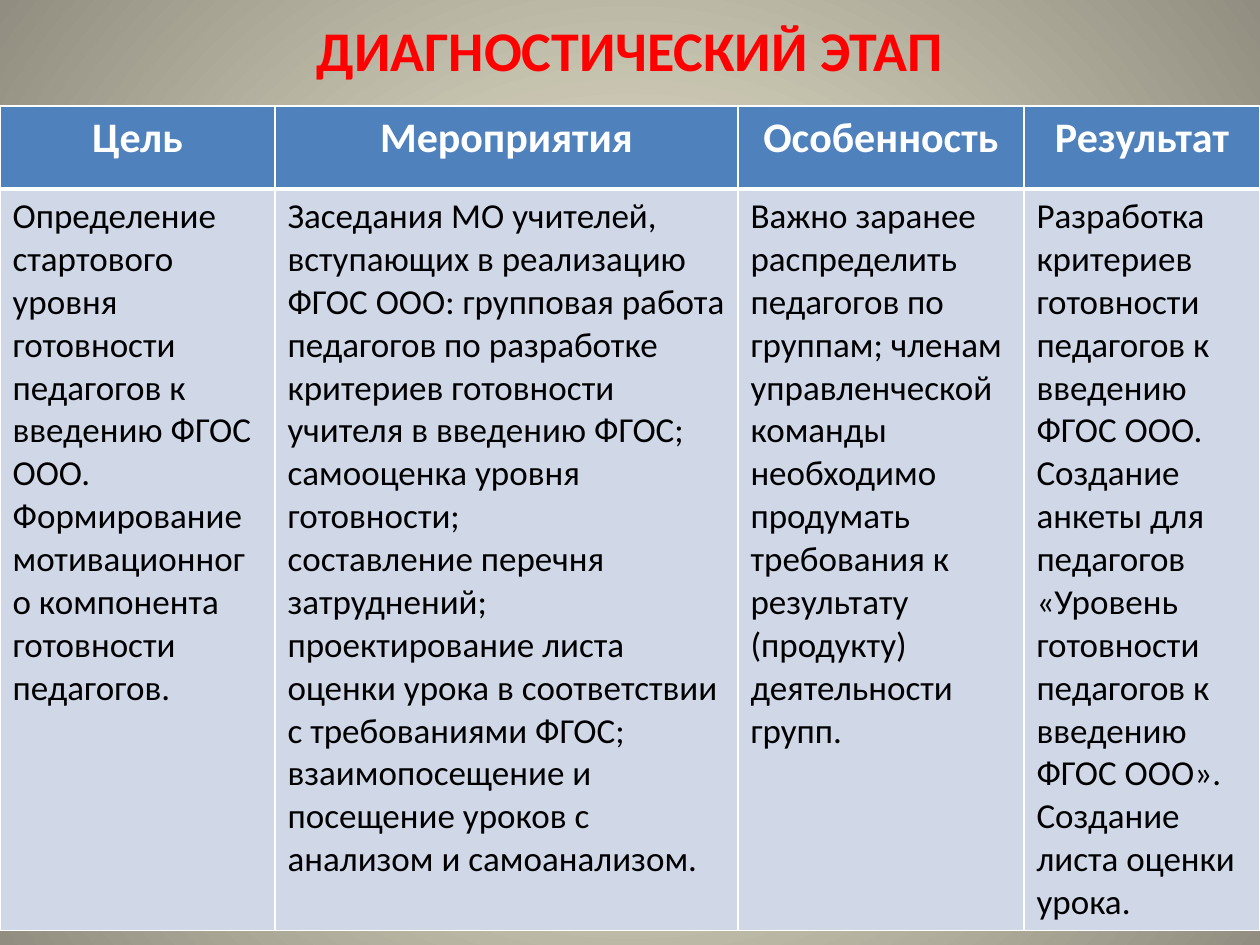
from lxml.etree import SubElement
from pptx import Presentation
from pptx.dml.color import RGBColor
from pptx.enum.text import MSO_ANCHOR, PP_ALIGN
from pptx.oxml.ns import qn
from pptx.util import Emu, Pt

PX = 914400 // 126
FONT = "Calibri"
COLORS = {
    "glow": "FCF7DD", "edge": "918E81", "title": "FF0000", "head": "4F81BD",
    "body": "D0D8E8", "white": "FFFFFF", "black": "000000",
}
WIDTHS = [275, 463, 286, 236]
HEIGHTS = [83, 723]
HEADS = ["Цель", "Мероприятия", "Особенность", "Результат"]
BODY = [
    ["Определение стартового уровня готовности педагогов к введению ФГОС ООО. "
     "Формирование мотивационного компонента готовности педагогов."],
    ["Заседания МО учителей, вступающих в реализацию ФГОС ООО: групповая работа "
     "педагогов по разработке критериев готовности учителя в введению ФГОС;",
     "самооценка уровня готовности;",
     "составление перечня затруднений;",
     "проектирование листа оценки урока в соответствии с требованиями ФГОС;",
     "взаимопосещение и посещение уроков с анализом и самоанализом."],
    ["Важно заранее распределить педагогов по группам; членам управленческой "
     "команды необходимо продумать требования к результату (продукту) "
     "деятельности групп."],
    ["Разработка критериев готовности педагогов к введению ФГОС ООО.",
     "Создание анкеты для педагогов «Уровень готовности педагогов к введению "
     "ФГОС ООО».",
     "Создание листа оценки урока."],
]


def px(n):
    return Emu(n * PX)


def rgb(name):
    return RGBColor.from_string(COLORS[name])


class Page:
    def __init__(self, deck):
        self.slide = deck.slides.add_slide(deck.slide_layouts[5])

    def back(self, inner, outer):
        fill = self.slide.background.fill
        fill.gradient()
        for stop, name, pos in zip(fill.gradient_stops, (inner, outer), (0, 1)):
            stop.color.rgb = rgb(name)
            stop.position = pos
        # Turn the linear gradient into a circular one
        grad = self.slide.element.find(".//" + qn("a:gradFill"))
        grad.remove(grad.find(qn("a:lin")))
        ring = SubElement(grad, qn("a:path"), path="circle")
        SubElement(ring, qn("a:fillToRect"), {k: "50000" for k in "ltrb"})

    def style(self, frame, size, color, bold, align):
        for para in frame.paragraphs:
            para.alignment = align
            for run in para.runs:
                font = run.font
                font.name, font.size, font.bold = FONT, Pt(size), bold
                font.color.rgb = rgb(color)

    def title(self, text, x, y, w, h):
        shape = self.slide.shapes.title
        shape.left, shape.top, shape.width, shape.height = map(px, (x, y, w, h))
        frame = shape.text_frame
        frame.text = text
        frame.vertical_anchor = MSO_ANCHOR.MIDDLE
        self.style(frame, 32, "title", True, PP_ALIGN.CENTER)

    def border(self, cell, **widths):
        props = cell._tc.get_or_add_tcPr()
        for side in "LRTB":
            line = SubElement(props, qn("a:ln" + side), w=str(Pt(widths.get(side, 1))))
            fill = SubElement(line, qn("a:solidFill"))
            SubElement(fill, qn("a:srgbClr"), val=COLORS["white"])

    def cell(self, cell, text, fill, size, color, bold, align, **widths):
        cell.text_frame.text = text
        self.style(cell.text_frame, size, color, bold, align)
        self.border(cell, **widths)
        cell.fill.solid()
        cell.fill.fore_color.rgb = rgb(fill)

    def table(self, x, y, heads, body):
        box = map(px, (x, y, sum(WIDTHS), sum(HEIGHTS)))
        grid = self.slide.shapes.add_table(2, len(heads), *box).table
        for row, high in zip(grid.rows, HEIGHTS):
            row.height = px(high)
        for i, wide in enumerate(WIDTHS):
            grid.columns[i].width = px(wide)
            self.cell(grid.cell(0, i), heads[i], "head", 24, "white", True,
                      PP_ALIGN.CENTER, B=3)
            self.cell(grid.cell(1, i), "\n".join(body[i]), "body", 20, "black",
                      False, PP_ALIGN.LEFT, T=3)


def main():
    deck = Presentation()
    deck.slide_width, deck.slide_height = px(1260), px(945)
    page = Page(deck)
    # Background and heading
    page.back("glow", "edge")
    page.title("ДИАГНОСТИЧЕСКИЙ ЭТАП", 63, 0, 1134, 98)
    # Stage table
    page.table(0, 106, HEADS, BODY)
    deck.save("out.pptx")


if __name__ == "__main__":
    main()
